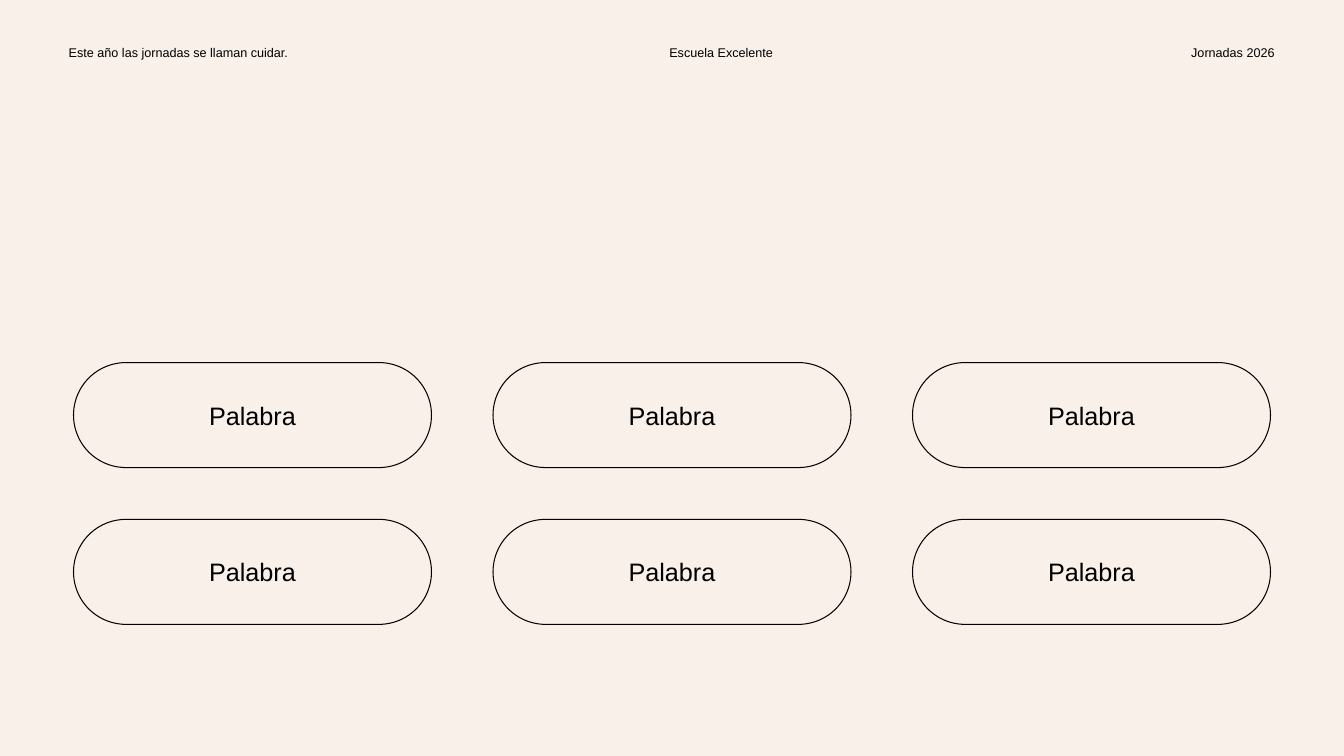
import pptx
import pptx.dml.color
import pptx.enum.shapes
import pptx.enum.text
import pptx.util

Pt = pptx.util.Pt
ALIGN = pptx.enum.text.PP_ALIGN
ANCHOR = pptx.enum.text.MSO_ANCHOR

HEADER = [
    ("Este año las jornadas se llaman cuidar.", 42, 276, ALIGN.LEFT),
    ("Escuela Excelente", 471, 171, ALIGN.LEFT),
    ("Jornadas 2026", 631.5, 286, ALIGN.RIGHT),
]
WORDS = [
    ["Palabra", "Palabra", "Palabra"],
    ["Palabra", "Palabra", "Palabra"],
]

SLIDE_WIDTH, SLIDE_HEIGHT = 960, 540
HEADER_TOP, HEADER_HEIGHT = 29.5, 32.4
MARGIN = 52.5
PILL_WIDTH, PILL_HEIGHT = 255.7, 75
PILLS_TOP, ROW_STEP = 259, 112
INK, PAPER = "000000", "F8F0E9"


def color(value):
    return pptx.dml.color.RGBColor.from_string(value)


def write(part, text, size=18, align=ALIGN.CENTER, anchor=ANCHOR.MIDDLE, spacing=1.0):
    frame = part.text_frame
    frame.word_wrap = True
    frame.vertical_anchor = anchor
    paragraph = frame.paragraphs[0]
    paragraph.text = text
    paragraph.alignment = align
    paragraph.line_spacing = spacing
    paragraph.font.name = "Arial"
    paragraph.font.size = Pt(size)
    paragraph.font.color.rgb = color(INK)


def add_pill(slide, word, left, top):
    pill = slide.shapes.add_shape(
        pptx.enum.shapes.MSO_SHAPE.ROUNDED_RECTANGLE,
        Pt(left), Pt(top), Pt(PILL_WIDTH), Pt(PILL_HEIGHT))
    pill.adjustments[0] = 0.5
    pill.shadow.inherit = False
    pill.fill.background()
    pill.line.color.rgb = color(INK)
    pill.line.width = Pt(0.75)
    write(pill, word)


def main():
    deck = pptx.Presentation()
    deck.slide_width, deck.slide_height = Pt(SLIDE_WIDTH), Pt(SLIDE_HEIGHT)
    slide = deck.slides.add_slide(deck.slide_layouts[6])
    slide.background.fill.solid()
    slide.background.fill.fore_color.rgb = color(PAPER)

    for text, left, width, align in HEADER:
        label = slide.shapes.add_textbox(
            Pt(left), Pt(HEADER_TOP), Pt(width), Pt(HEADER_HEIGHT))
        write(label, text, size=9, align=align, anchor=ANCHOR.TOP, spacing=0.9)

    for row, words in enumerate(WORDS):
        column_step = (SLIDE_WIDTH - 2 * MARGIN - PILL_WIDTH) / (len(words) - 1)
        for column, word in enumerate(words):
            add_pill(slide, word, MARGIN + column * column_step, PILLS_TOP + row * ROW_STEP)

    deck.save("out.pptx")


if __name__ == "__main__":
    main()
